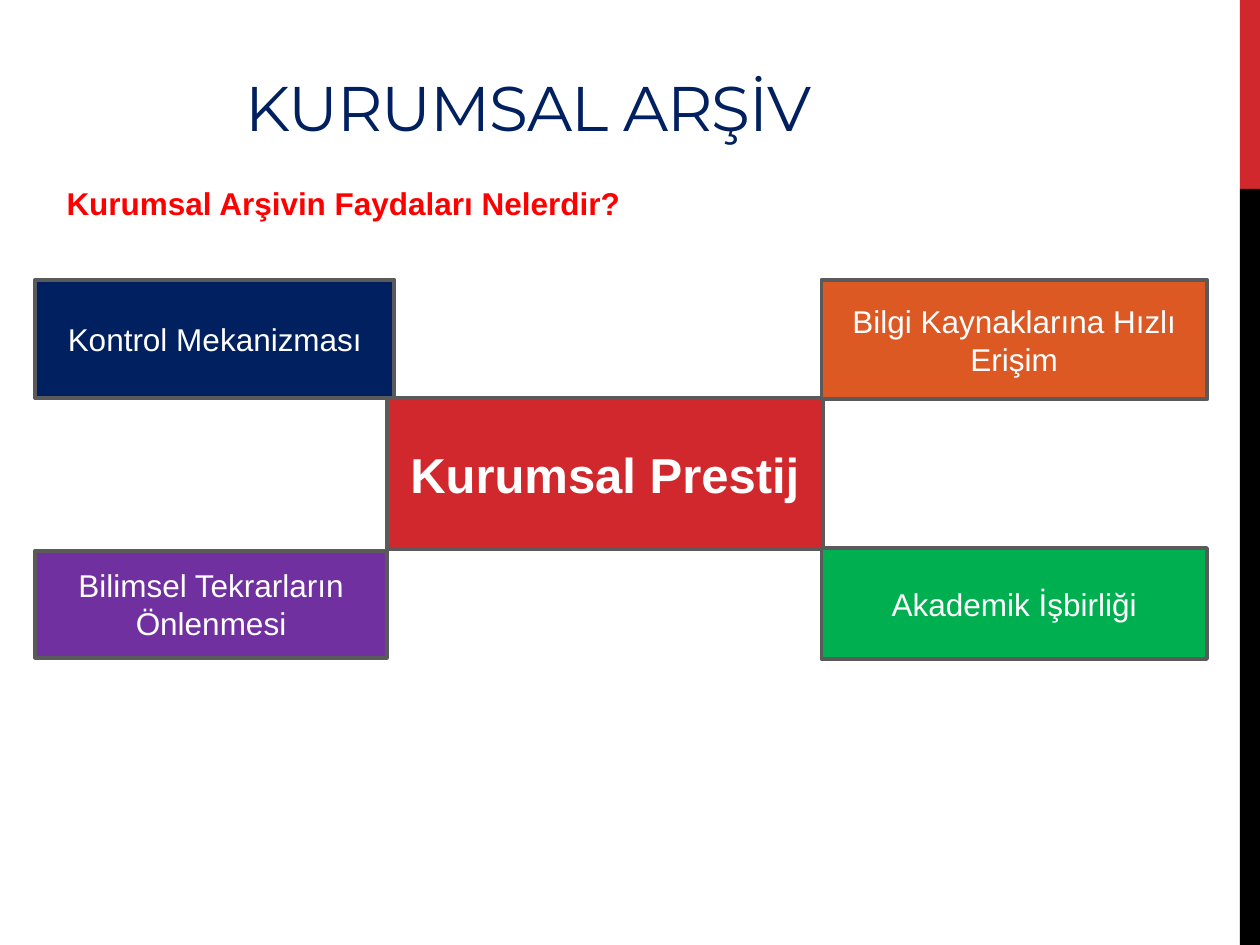
from pptx import Presentation
from pptx.dml.color import RGBColor
from pptx.enum.shapes import MSO_SHAPE
from pptx.enum.text import MSO_ANCHOR, PP_ALIGN
from pptx.util import Inches, Pt

RECTANGLE = MSO_SHAPE.RECTANGLE
TOP, MIDDLE, BOTTOM = MSO_ANCHOR.TOP, MSO_ANCHOR.MIDDLE, MSO_ANCHOR.BOTTOM
LEFT, CENTER, JUSTIFY = PP_ALIGN.LEFT, PP_ALIGN.CENTER, PP_ALIGN.JUSTIFY

WHITE, BLACK, RED, NAVY = "FFFFFF", "000000", "D1282E", "002060"
OUTLINE = "5A5A5A"


def color(value):
    return RGBColor.from_string(value)


def write(shape, text, size, ink, font="Arial", bold=False, align=CENTER, anchor=MIDDLE):
    frame = shape.text_frame
    frame.vertical_anchor = anchor
    para = frame.paragraphs[0]
    para.text = text
    para.alignment = align
    para.font.name = font
    para.font.size = Pt(size)
    para.font.bold = bold
    para.font.color.rgb = color(ink)


def add_rectangle(page, box, fill):
    shape = page.shapes.add_shape(RECTANGLE, *map(Inches, box))
    shape.shadow.inherit = False
    shape.fill.solid()
    shape.fill.fore_color.rgb = color(fill)
    shape.line.fill.background()
    return shape


def add_side_band(page, box):
    left, top, width, height = box
    red_height = height / 5
    add_rectangle(page, (left, top, width, red_height), RED)
    add_rectangle(page, (left, top + red_height, width, height - red_height), BLACK)


def add_title(page, box):
    title = page.shapes.add_textbox(*map(Inches, box))
    title.text_frame.word_wrap = True
    write(title, "KURUMSAL ARŞİV", 36, NAVY, "Montserrat", align=LEFT, anchor=BOTTOM)
    # Slightly tightened letter spacing, in hundredths of a point
    span = title.text_frame.paragraphs[0].runs[0]
    span.font._element.set("spc", "-60")


def add_question(page, box):
    question = page.shapes.add_textbox(*map(Inches, box))
    question.text_frame.word_wrap = False
    write(question, "Kurumsal Arşivin Faydaları Nelerdir?", 18, "FF0000",
          bold=True, align=JUSTIFY, anchor=TOP)


def add_benefits(page, box):
    left, top, width, height = box
    right_width = 3.06
    right = left + width - right_width
    bottom = top + height

    # Prestige in the centre, then the four benefits at its corners
    benefits = [
        ("Kurumsal Prestij", (3.07, 3.16, 3.46, 1.2), RED, 28, True),
        ("Kontrol Mekanizması", (left, top, 2.85, 0.94), NAVY, 18, False),
        ("Bilimsel Tekrarların Önlenmesi", (left, bottom - 0.86, 2.79, 0.85),
         "7030A0", 18, False),
        ("Akademik İşbirliği", (right, bottom - 0.88, right_width, 0.88),
         "00B050", 18, False),
        ("Bilgi Kaynaklarına Hızlı Erişim", (right, top, right_width, 0.95),
         "DC5924", 18, False),
    ]
    for text, place, fill, size, bold in benefits:
        benefit = add_rectangle(page, place, fill)
        benefit.line.color.rgb = color(OUTLINE)
        benefit.line.width = Pt(2.25)
        write(benefit, text, size, WHITE, bold=bold)


def main():
    deck = Presentation()
    deck.slide_width, deck.slide_height = Inches(10), Inches(7.5)
    page = deck.slides.add_slide(deck.slide_layouts[6])

    add_side_band(page, (9.84, 0, 0.16, 7.5))
    add_title(page, (1.85, 0.36, 6.33, 0.83))
    add_benefits(page, (0.28, 2.22, 9.3, 3.01))
    add_question(page, (0.43, 1.41, 4.64, 0.4))

    deck.save("out.pptx")


if __name__ == "__main__":
    main()
